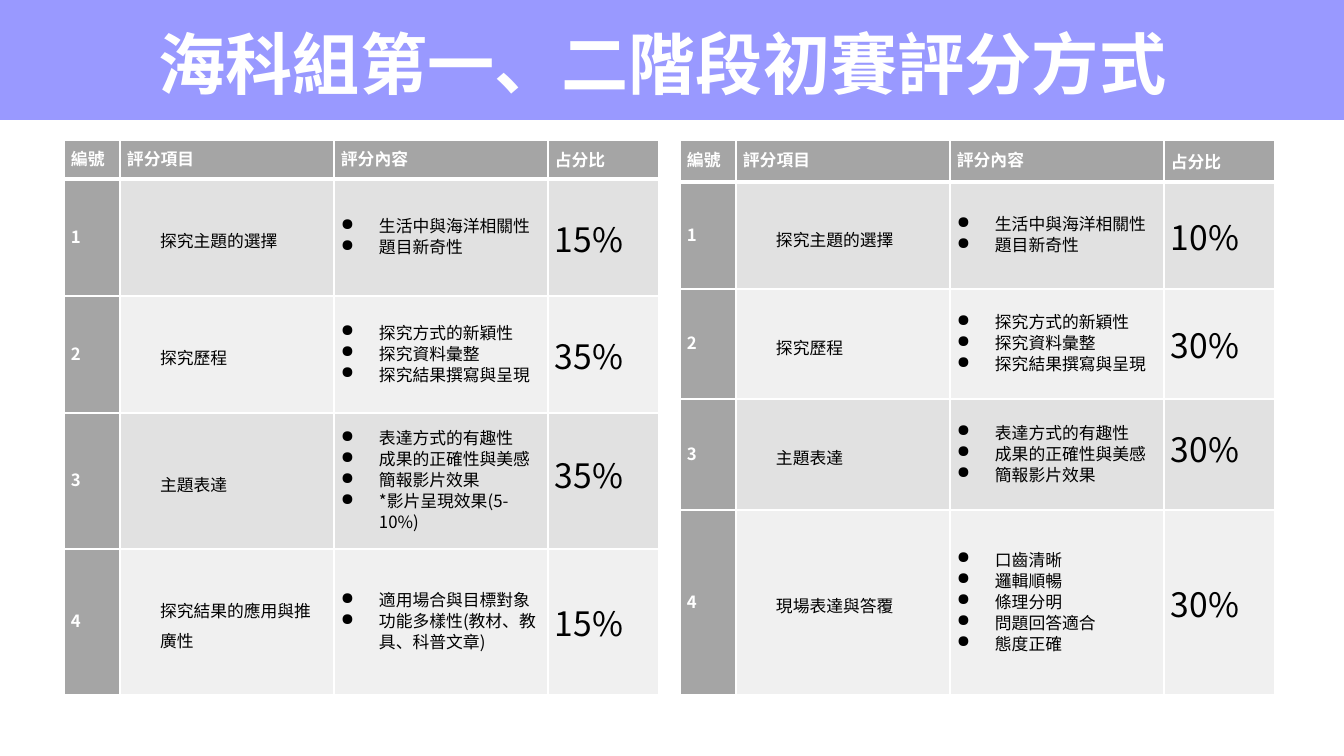
from lxml.etree import SubElement
from pptx import Presentation
from pptx.dml.color import RGBColor
from pptx.enum.shapes import MSO_SHAPE
from pptx.enum.text import MSO_ANCHOR, PP_ALIGN
from pptx.oxml import parse_xml
from pptx.oxml.ns import nsdecls, qn
from pptx.util import Emu, Pt

COLORS = {
    "banner": "9999FF",
    "header": "A5A5A5",
    "odd": "E1E1E1",
    "even": "F0F0F0",
    "white": "FFFFFF",
    "black": "000000",
}
FONT = "Noto Sans CJK SC"
HEADINGS = ["編號", "評分項目", "評分內容", "占分比"]
COLUMN_WIDTHS = [56, 214, 214, 111]
TABLE_TOP = 140

TOPIC = ("探究主題的選擇", ["生活中與海洋相關性", "題目新奇性"])
PROCESS = ("探究歷程", ["探究方式的新穎性", "探究資料彙整", "探究結果撰寫與呈現"])
EXPRESSION = ["表達方式的有趣性", "成果的正確性與美感", "簡報影片效果"]

FIRST_STAGE = [
    (*TOPIC, "15%"),
    (*PROCESS, "35%"),
    ("主題表達", EXPRESSION + ["*影片呈現效果(5-10%)"], "35%"),
    ("探究結果的應用與推廣性",
     ["適用場合與目標對象", "功能多樣性(教材、教具、科普文章)"], "15%"),
]
SECOND_STAGE = [
    (*TOPIC, "10%"),
    (*PROCESS, "30%"),
    ("主題表達", EXPRESSION, "30%"),
    ("現場表達與答覆",
     ["口齒清晰", "邏輯順暢", "條理分明", "問題回答適合", "態度正確"], "30%"),
]


def px(value):
    return Emu(round(value * 914400 / 100.8))


def rgb(name):
    return RGBColor.from_string(COLORS[name])


class SlideBuilder:
    def __init__(self, page):
        self.page = page

    def rectangle(self, left, top, width, height, color):
        box = self.page.shapes.add_shape(
            MSO_SHAPE.RECTANGLE, px(left), px(top), px(width), px(height))
        box.shadow.inherit = False
        box.fill.solid()
        box.fill.fore_color.rgb = rgb(color)
        box.line.fill.background()
        return box

    def title(self, left, top, width, height, text):
        box = self.rectangle(left, top, width, height, "banner")
        box.text_frame.word_wrap = True
        self.fill_text(box.text_frame, [text], 48, "white", True)
        box.text_frame.paragraphs[0].alignment = PP_ALIGN.CENTER

    def fill_text(self, frame, lines, size, color, bold=False, spacing=None,
                  indent=0, bullet=False):
        for index, line in enumerate(lines):
            para = frame.paragraphs[0] if index == 0 else frame.add_paragraph()
            para.text = line
            if spacing:
                para.line_spacing = Pt(spacing)
            properties = para._p.get_or_add_pPr()
            properties.set("marL", str(px(indent)))
            properties.set("indent", str(-px(indent) if bullet else 0))
            if bullet:
                SubElement(properties, qn("a:buChar"), char="●")
            font = para.font
            font.size, font.bold, font.name = Pt(size), bold, FONT
            font.color.rgb = rgb(color)
            # East Asian typeface follows the Latin one
            SubElement(properties.find(qn("a:defRPr")), qn("a:ea"), typeface=FONT)

    def cell(self, cell, fill, lines, size=12, color="black", top=1, bottom=1,
             **style):
        cell.fill.solid()
        cell.fill.fore_color.rgb = rgb(fill)
        cell.vertical_anchor = MSO_ANCHOR.MIDDLE
        cell.margin_left = cell.margin_right = px(7)
        cell.margin_top = cell.margin_bottom = 0
        self.fill_text(cell.text_frame, lines, size, color, **style)
        # Borders come before the fill in the cell properties
        borders = {"L": 1, "R": 1, "T": top, "B": bottom}
        for index, (side, points) in enumerate(borders.items()):
            cell._tc.get_or_add_tcPr().insert(index, parse_xml(
                f'<a:ln{side} {nsdecls("a")} w="{Pt(points)}"><a:solidFill>'
                f'<a:srgbClr val="{COLORS["white"]}"/></a:solidFill></a:ln{side}>'))

    def score_table(self, left, row_heights, criteria):
        table = self.page.shapes.add_table(
            len(row_heights), len(COLUMN_WIDTHS), px(left), px(TABLE_TOP),
            px(sum(COLUMN_WIDTHS)), px(sum(row_heights))).table
        table.first_row = table.horz_banding = False
        for column, width in zip(table.columns, COLUMN_WIDTHS):
            column.width = px(width)
        for row, height in zip(table.rows, row_heights):
            row.height = px(height)

        # Header row
        for index, heading in enumerate(HEADINGS):
            self.cell(table.cell(0, index), "header", [heading], color="white",
                      bold=True, bottom=3, spacing=15 if index < 3 else None)

        # One row per criterion
        for number, (item, details, share) in enumerate(criteria, 1):
            band = "odd" if number % 2 else "even"
            top = 3 if number == 1 else 1
            self.cell(table.cell(number, 0), "header", [str(number)],
                      color="white", bold=True, top=top, spacing=15)
            self.cell(table.cell(number, 1), band, [item], top=top,
                      spacing=22, indent=33)
            self.cell(table.cell(number, 2), band, details, top=top,
                      spacing=15, indent=38, bullet=True)
            self.cell(table.cell(number, 3), band, [share], size=24, top=top,
                      spacing=25 if number == 3 else None)


def main():
    deck = Presentation()
    deck.slide_width, deck.slide_height = px(1344), px(756)
    builder = SlideBuilder(deck.slides.add_slide(deck.slide_layouts[6]))

    # Score tables
    builder.score_table(680, [42, 107, 110, 111, 185], SECOND_STAGE)
    builder.score_table(64, [39, 117, 117, 136, 146], FIRST_STAGE)

    # Title banner
    builder.rectangle(0, 0, 1344, 120, "banner")
    builder.title(-19, 17, 1363, 92, "海科組第一、二階段初賽評分方式")

    deck.save("out.pptx")


if __name__ == "__main__":
    main()
